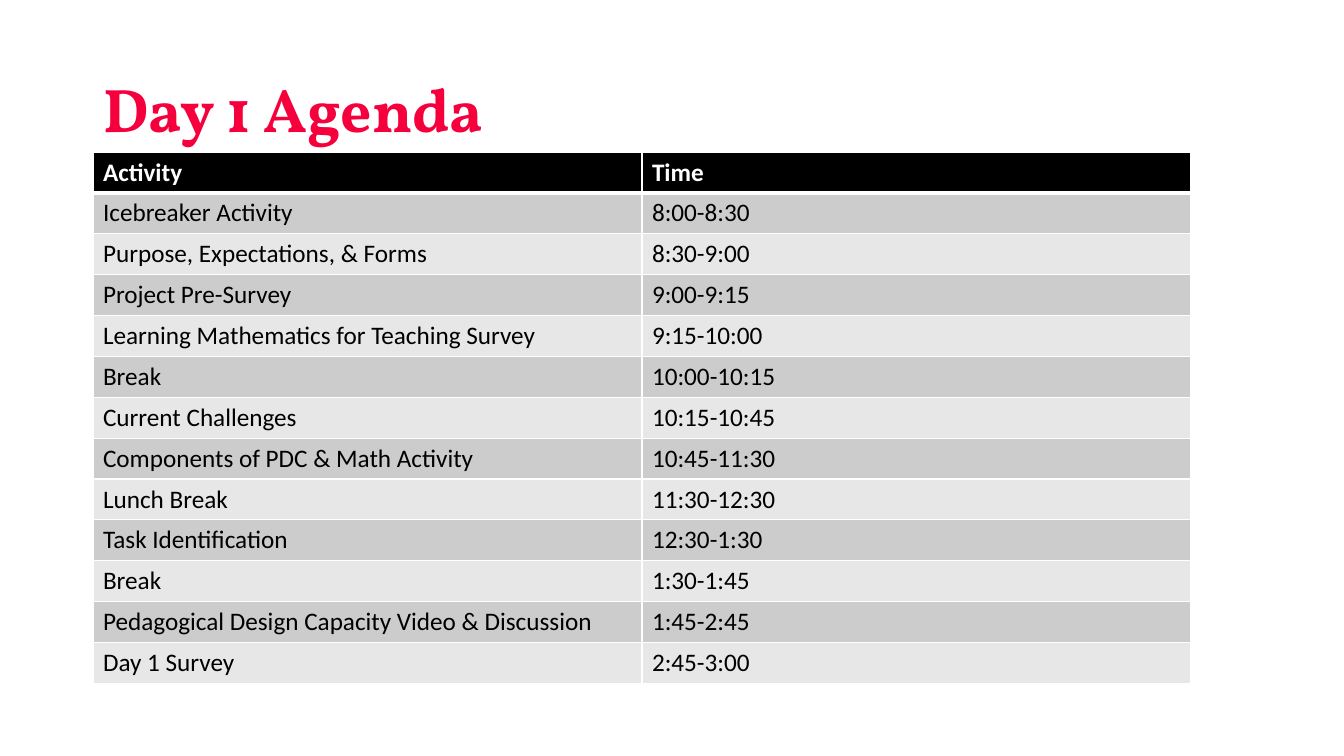
from dataclasses import dataclass

from lxml import etree
from pptx import Presentation
from pptx import util as u
from pptx.dml.color import RGBColor
from pptx.enum import text
from pptx.oxml.ns import qn

EMU_PER_PX = 914400 / 100.8

AGENDA = [
    ("Activity", "Time"),
    ("Icebreaker Activity", "8:00-8:30"),
    ("Purpose, Expectations, & Forms", "8:30-9:00"),
    ("Project Pre-Survey", "9:00-9:15"),
    ("Learning Mathematics for Teaching Survey", "9:15-10:00"),
    ("Break", "10:00-10:15"),
    ("Current Challenges", "10:15-10:45"),
    ("Components of PDC & Math Activity", "10:45-11:30"),
    ("Lunch Break", "11:30-12:30"),
    ("Task Identification", "12:30-1:30"),
    ("Break", "1:30-1:45"),
    ("Pedagogical Design Capacity Video & Discussion", "1:45-2:45"),
    ("Day 1 Survey", "2:45-3:00"),
]


@dataclass(frozen=True)
class Theme:
    """Colours, fonts and type sizes of the slide."""

    title_font: str = "Vollkorn"
    body_font: str = "Calibri"
    title_size: int = 44
    body_size: int = 18
    accent: str = "F5003D"
    header: str = "000000"
    header_ink: str = "FFFFFF"
    ink: str = "000000"
    bands: tuple = ("CCCCCC", "E7E7E7")
    rule: str = "FFFFFF"
    rule_width: int = 1
    header_rule_width: int = 3


THEME = Theme()


def px(length):
    """Turn a length in px into EMU."""
    return u.Emu(round(length * EMU_PER_PX))


def format_font(font, color, **values):
    """Apply a colour and further format values to a font."""
    font.color.rgb = RGBColor.from_string(color)
    for name, value in values.items():
        setattr(font, name, value)


def add_title(slide, wording, left, top, width, height):
    """Place and format the slide title."""
    title = slide.shapes.title
    box = {"left": left, "top": top, "width": width, "height": height}
    for name, value in box.items():
        setattr(title, name, px(value))
    frame = title.text_frame
    frame.text = wording
    frame.auto_size = text.MSO_AUTO_SIZE.NONE
    frame.vertical_anchor = text.MSO_ANCHOR.MIDDLE
    heading = frame.paragraphs[0]
    heading.alignment = text.PP_ALIGN.LEFT
    heading.line_spacing = 0.9
    format_font(heading.font, THEME.accent, name=THEME.title_font,
                size=u.Pt(THEME.title_size), bold=True)


def add_borders(cell, **widths):
    """Draw the cell's borders, with widths in points by side."""
    properties = cell._tc.get_or_add_tcPr()
    for place, side in enumerate("LRTB"):
        width = widths.get(side, THEME.rule_width)
        line = etree.Element(qn(f"a:ln{side}"), w=str(u.Pt(width)))
        fill = etree.SubElement(line, qn("a:solidFill"))
        etree.SubElement(fill, qn("a:srgbClr"), val=THEME.rule)
        properties.insert(place, line)


def format_cell(cell, wording, row):
    """Fill one agenda cell according to its row."""
    is_header = row == 0
    cell.text = wording
    cell.fill.solid()
    band = THEME.header if is_header else THEME.bands[(row - 1) % 2]
    cell.fill.fore_color.rgb = RGBColor.from_string(band)
    format_font(cell.text_frame.paragraphs[0].font,
                THEME.header_ink if is_header else THEME.ink,
                name=THEME.body_font, size=u.Pt(THEME.body_size), bold=is_header)
    thick = {0: "B", 1: "T"}.get(row)
    add_borders(cell, **({thick: THEME.header_rule_width} if thick else {}))


def add_agenda(slide, entries, left, top, width, height):
    """Add the agenda table with equal rows and columns."""
    agenda = slide.shapes.add_table(len(entries), len(entries[0]), px(left),
                                    px(top), px(width), px(height)).table
    for row, entry in enumerate(entries):
        for column, wording in enumerate(entry):
            format_cell(agenda.cell(row, column), wording, row)


def main():
    """Build the agenda slide and save it."""
    deck = Presentation()
    deck.slide_width, deck.slide_height = px(1344), px(756)
    slide = deck.slides.add_slide(deck.slide_layouts[5])
    add_title(slide, "Day 1 Agenda", 93, 40, 1159, 146)
    add_agenda(slide, AGENDA, 93, 152, 1098, 531)
    deck.save("out.pptx")


if __name__ == "__main__":
    main()
